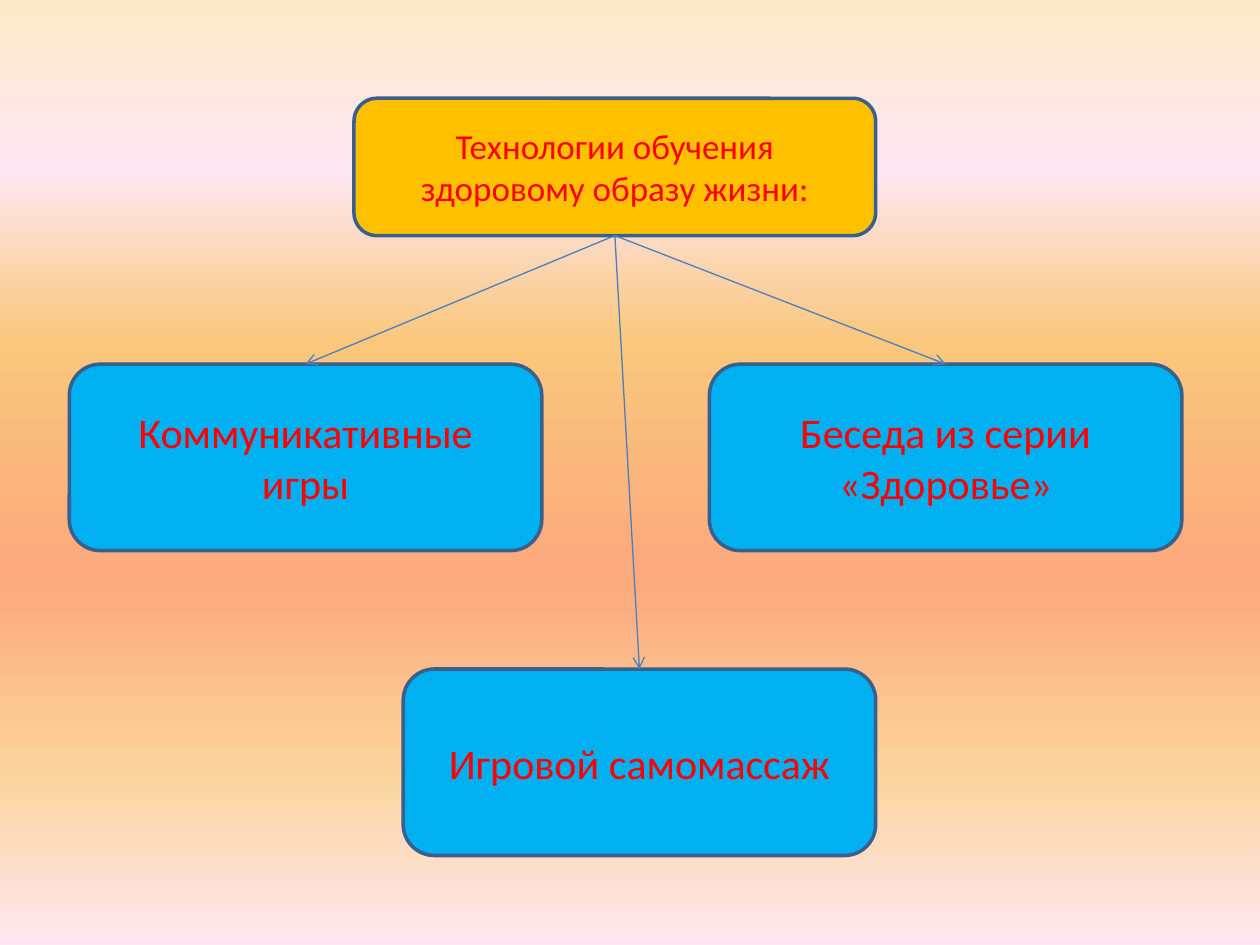
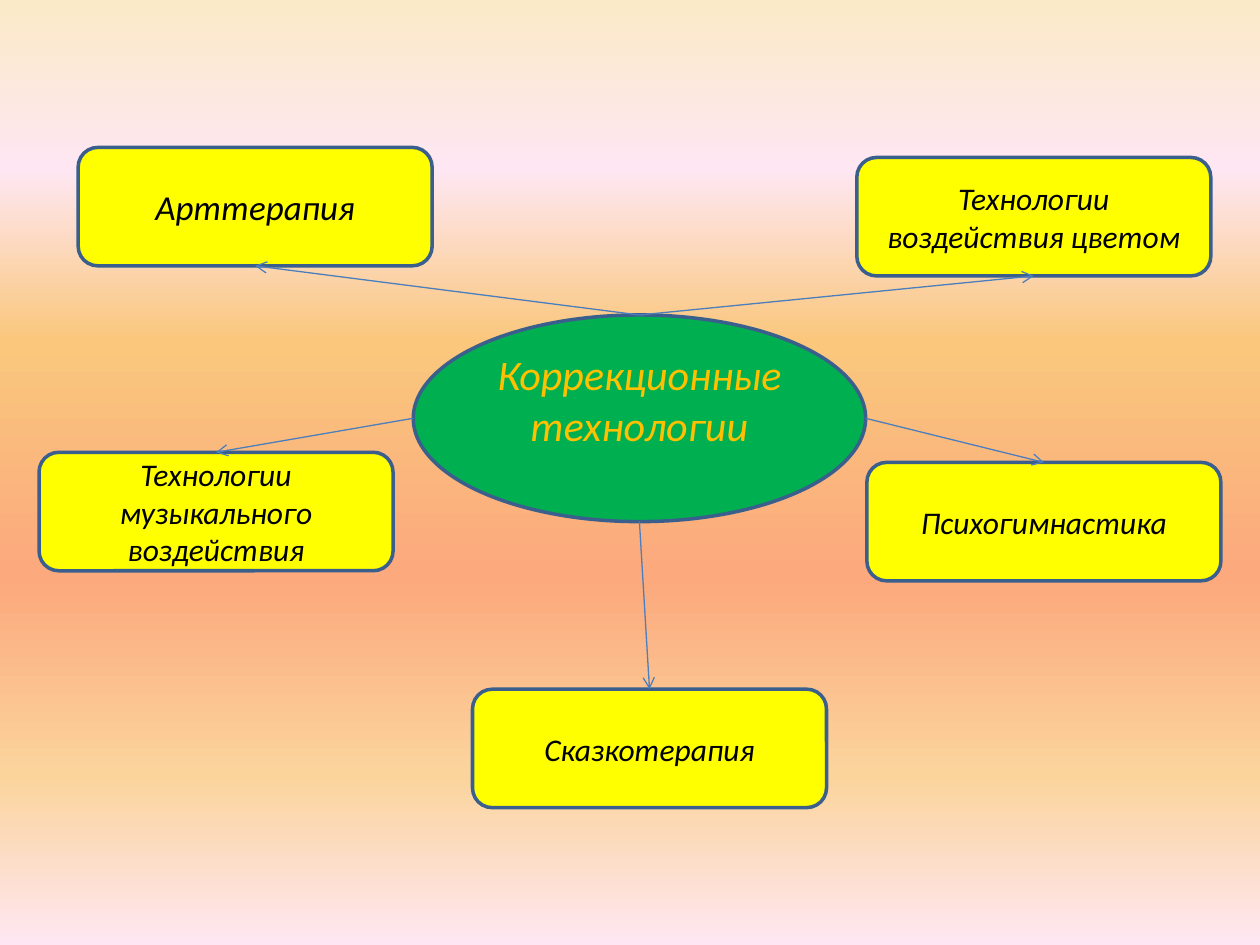
from dataclasses import dataclass

from lxml import etree
from pptx import Presentation
from pptx.dml.color import RGBColor
from pptx.enum.shapes import MSO_CONNECTOR, MSO_SHAPE
from pptx.enum.text import MSO_ANCHOR, PP_ALIGN
from pptx.oxml.ns import qn
from pptx.util import Inches, Pt

ROUNDED = MSO_SHAPE.ROUNDED_RECTANGLE
OVAL = MSO_SHAPE.OVAL
STRAIGHT = MSO_CONNECTOR.STRAIGHT
MIDDLE = MSO_ANCHOR.MIDDLE
CENTER = PP_ALIGN.CENTER
TOP, BOTTOM = 0, 2  # connection sites of a rectangle


@dataclass(frozen=True)
class Theme:
    font: str = "Calibri"
    red: str = "FF0000"
    black: str = "000000"
    amber: str = "FFC000"
    blue: str = "00B0F0"
    yellow: str = "FFFF00"
    green: str = "00B050"
    outline: str = "3A5F8C"
    arrow: str = "4B7EBC"
    large: int = 24
    medium: int = 20
    small: int = 18
    outline_width: float = 2
    arrow_width: float = 0.75
    sunset: tuple = ((0, "FBEAC7"), (18, "FEE7F2"), (36, "FAC77D"),
                     (61, "FBA97D"), (82, "FBD49C"), (100, "FEE7F2"))


THEME = Theme()


def rgb(color):
    return RGBColor.from_string(color)


def set_background(master):
    """Give every page the same vertical gradient."""
    fill = master.background.fill
    fill.gradient()
    fill.gradient_angle = 270
    stops = master.element.find(".//" + qn("a:gsLst"))
    for stop in list(stops):
        stops.remove(stop)
    for percent, color in THEME.sunset:
        stop = etree.SubElement(stops, qn("a:gs"), pos=str(percent * 1000))
        etree.SubElement(stop, qn("a:srgbClr"), val=color)


def add_node(page, text, place, fill, color, size, italic=False, kind=ROUNDED):
    """Add an outlined shape with centred text."""
    node = page.shapes.add_shape(kind, *[Inches(length) for length in place])
    node.shadow.inherit = False
    node.fill.solid()
    node.fill.fore_color.rgb = rgb(fill)
    node.line.color.rgb = rgb(THEME.outline)
    node.line.width = Pt(THEME.outline_width)
    frame = node.text_frame
    frame.word_wrap = True
    frame.vertical_anchor = MIDDLE
    frame.text = text
    para = frame.paragraphs[0]
    para.alignment = CENTER
    font = para.runs[0].font
    font.name = THEME.font
    font.size = Pt(size)
    font.italic = italic
    font.color.rgb = rgb(color)
    return node


def add_arrow(page, start, target, side):
    """Draw an arrow from a point to the middle of a side of the target."""
    arrow = page.shapes.add_connector(STRAIGHT, *start, *start)
    arrow.end_connect(target, side)
    arrow.line.color.rgb = rgb(THEME.arrow)
    arrow.line.width = Pt(THEME.arrow_width)
    etree.SubElement(arrow.line._get_or_add_ln(), qn("a:tailEnd"), type="arrow")
    etree.SubElement(arrow._element.spPr, qn("a:effectLst"))
    return arrow


def edge_points(node):
    """Return the middles of the four sides of a node."""
    center = node.left + node.width // 2
    middle = node.top + node.height // 2
    return {"top": (center, node.top),
            "left": (node.left, middle),
            "bottom": (center, node.top + node.height),
            "right": (node.left + node.width, middle)}


def build_healthy_life(page):
    heading = add_node(page, "Технологии обучения здоровому образу жизни:",
                       (2.81, 0.78, 4.14, 1.09), THEME.amber, THEME.red, THEME.medium)
    methods = (("Коммуникативные игры", 0.55, 2.89),
               ("Игровой самомассаж", 3.2, 5.31),
               ("Беседа из серии «Здоровье»", 5.63, 2.89))
    start = edge_points(heading)["bottom"]
    for text, left, top in methods:
        method = add_node(page, text, (left, top, 3.75, 1.48),
                          THEME.blue, THEME.red, THEME.large)
        arrow = add_arrow(page, start, method, TOP)
        arrow.begin_connect(heading, BOTTOM)


def build_correction(page):
    # Central oval, its text raised by a deeper bottom inset
    hub = add_node(page, "Коррекционные технологии", (3.28, 2.5, 3.59, 1.64),
                   THEME.green, THEME.amber, THEME.large, italic=True, kind=OVAL)
    hub.text_frame.margin_bottom = Inches(0.35)
    starts = edge_points(hub)

    # Therapies: text, left, top, size, side of the oval, side of the box
    therapies = (
        ("Арттерапия", 0.62, 1.17, THEME.medium, "top", BOTTOM),
        ("Технологии музыкального воздействия", 0.31, 3.59, THEME.small, "left", TOP),
        ("Сказкотерапия", 3.75, 5.47, THEME.small, "bottom", TOP),
        ("Психогимнастика", 6.88, 3.67, THEME.small, "right", TOP),
        ("Технологии воздействия цветом", 6.8, 1.25, THEME.small, "top", BOTTOM),
    )
    for text, left, top, size, hub_side, box_side in therapies:
        therapy = add_node(page, text, (left, top, 2.81, 0.94),
                           THEME.yellow, THEME.black, size, italic=True)
        add_arrow(page, starts[hub_side], therapy, box_side)


def main():
    deck = Presentation()
    deck.slide_width, deck.slide_height = Inches(10), Inches(7.5)
    set_background(deck.slide_master)
    blank = deck.slide_layouts[6]
    for build in (build_healthy_life, build_correction):
        build(deck.slides.add_slide(blank))
    deck.save("out.pptx")


if __name__ == "__main__":
    main()
